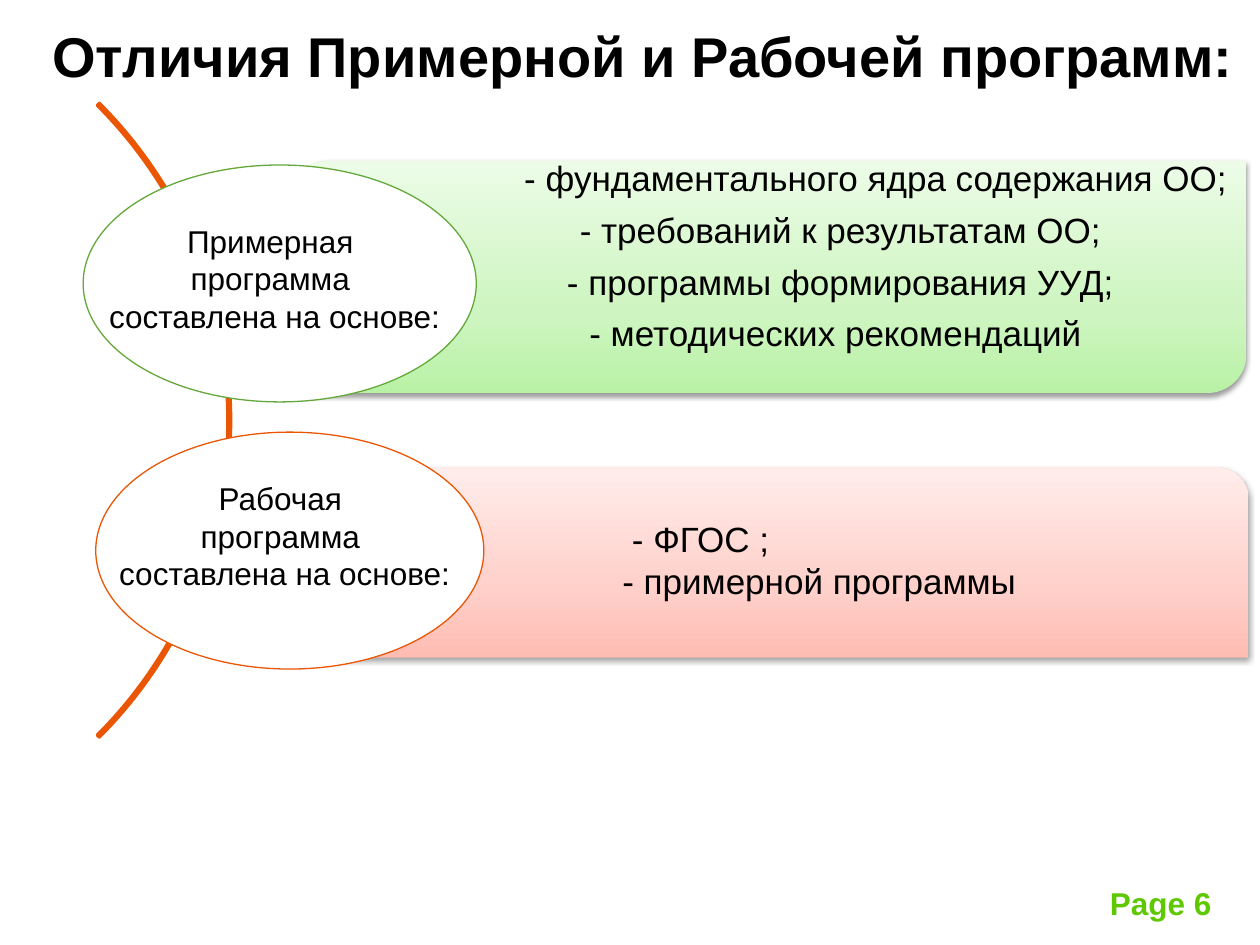
from copy import deepcopy
from lxml import etree
from pptx import Presentation
from pptx.dml.color import RGBColor
from pptx.enum.shapes import MSO_SHAPE
from pptx.enum.text import MSO_ANCHOR, MSO_AUTO_SIZE, PP_ALIGN
from pptx.oxml.ns import qn
from pptx.util import Pt

CENTER, LEFT = PP_ALIGN.CENTER, PP_ALIGN.LEFT
TOP, MIDDLE = MSO_ANCHOR.TOP, MSO_ANCHOR.MIDDLE
NO_FIT = MSO_AUTO_SIZE.NONE
ARC, OVAL = MSO_SHAPE.BLOCK_ARC, MSO_SHAPE.OVAL
DIAG, SAME = MSO_SHAPE.ROUND_2_DIAG_RECTANGLE, MSO_SHAPE.ROUND_2_SAME_RECTANGLE

PX = 9144  # 100 px to the inch
COLORS = {"black": "000000", "white": "FFFFFF", "orange": "EB5605",
          "green": "64A73B", "page": "5EC902"}
GREENS = ["B9F2A6", "CEF5C1", "ECFCE7"]
REDS = ["FFBCB3", "FFCFC9", "FFEDEB"]
STOPS = [0, 0.35, 1]


def rgb(name):
    return RGBColor.from_string(COLORS.get(name, name))


def emu(box):
    return [n * PX for n in box]


def write(frame, lines, size, color="black", bold=False, wrap=True, **form):
    """Fill a text frame; form holds paragraph format values."""
    look = {"word_wrap": wrap, "auto_size": NO_FIT}
    for key, val in look.items():
        setattr(frame, key, val)
    frame.text = "\n".join(lines)
    for par in frame.paragraphs:
        for key, val in form.items():
            setattr(par, key, val)
        for key, val in {"name": "Arial", "size": Pt(size), "bold": bold}.items():
            setattr(par.font, key, val)
        par.font.color.rgb = rgb(color)


def add_text(slide, box, lines, size, **form):
    frame = slide.shapes.add_textbox(*emu(box)).text_frame
    write(frame, lines, size, **form)
    return frame


def add_shape(slide, kind, box, fill=None, line=None, width=0.75):
    shape = slide.shapes.add_shape(kind, *emu(box))
    shape.shadow.inherit = False
    if fill:
        shape.fill.solid()
        shape.fill.fore_color.rgb = rgb(fill)
    else:
        shape.fill.background()
    if line:
        shape.line.color.rgb = rgb(line)
        shape.line.width = Pt(width)
    else:
        shape.line.fill.background()
    return shape


def add_band(slide, kind, box, tints):
    """Bar with a vertical three-stop gradient and a soft shadow."""
    band = add_shape(slide, kind, box)
    band.fill.gradient()
    band.fill.gradient_angle = 90
    props = band._element.spPr
    stops = props.find(".//" + qn("a:gsLst"))
    stops.append(deepcopy(stops[0]))
    for stop, tint, pos in zip(band.fill.gradient_stops, tints, STOPS):
        stop.color.rgb = rgb(tint)
        stop.position = pos
    shade = etree.SubElement(props.find(qn("a:effectLst")), qn("a:outerShdw"),
                             blurRad=str(Pt(3.1)), dist=str(Pt(1.6)),
                             dir="5400000", rotWithShape="0")
    tone = etree.SubElement(shade, qn("a:srgbClr"), val=COLORS["black"])
    etree.SubElement(tone, qn("a:alpha"), val="38000")


def add_title(slide, box):
    title = slide.shapes.title
    title.left, title.top, title.width, title.height = emu(box)
    write(title.text_frame, ["Отличия Примерной и Рабочей программ:"], 32,
          bold=True, alignment=CENTER)
    title.text_frame.vertical_anchor = MIDDLE


def add_arc(slide, box):
    arc = add_shape(slide, ARC, box, line="orange", width=2)
    for i, val in enumerate([189, 27, 0.003]):
        arc.adjustments[i] = val


def add_row(slide, kind, band, tints, oval, edge, label, word):
    """Gradient bar with a captioned oval at its left end."""
    add_band(slide, kind, band, tints)
    add_shape(slide, OVAL, oval, fill="white", line=edge)
    add_text(slide, label, [word + " ", "программа ", "составлена на основе:"],
             18, alignment=CENTER)


def main():
    deck = Presentation()
    deck.slide_width, deck.slide_height = emu([1000, 750])
    slide = deck.slides.add_slide(deck.slide_layouts[5])

    add_title(slide, [20, 12, 981, 64])
    add_arc(slide, [-528, -22, 711, 711])

    # Model programme
    add_row(slide, DIAG, [230, 128, 759, 184], GREENS,
            [66, 131, 312, 188], "green", [75, 171, 286, 101], "Примерная")
    basis = add_text(slide, [345, 128, 644, 184],
                     ["- фундаментального ядра содержания ОО;",
                      "- требований к результатам ОО;",
                      "- программы формирования УУД;",
                      "- методических рекомендаций "],
                     20, alignment=CENTER, line_spacing=0.9, space_after=Pt(8))
    for side, val in {"left": 5, "right": 5, "top": 0, "bottom": 0}.items():
        setattr(basis, "margin_" + side, val * PX)
    basis.vertical_anchor = TOP
    first = basis.paragraphs[0]._p.get_or_add_pPr()
    first.set("marL", str(56 * PX))
    first.set("indent", "0")

    # Working programme
    add_row(slide, SAME, [226, 371, 765, 151], REDS,
            [76, 343, 308, 188], "orange", [83, 375, 286, 101], "Рабочая")
    add_text(slide, [484, 406, 335, 77],
             [" - ФГОС ;", "- примерной программы"], 20, alignment=LEFT)

    # Page mark
    add_text(slide, [871, 697, 117, 40], ["Page 6"], 18, color="page",
             bold=True, wrap=False, alignment=LEFT)
    deck.save("out.pptx")


if __name__ == "__main__":
    main()
